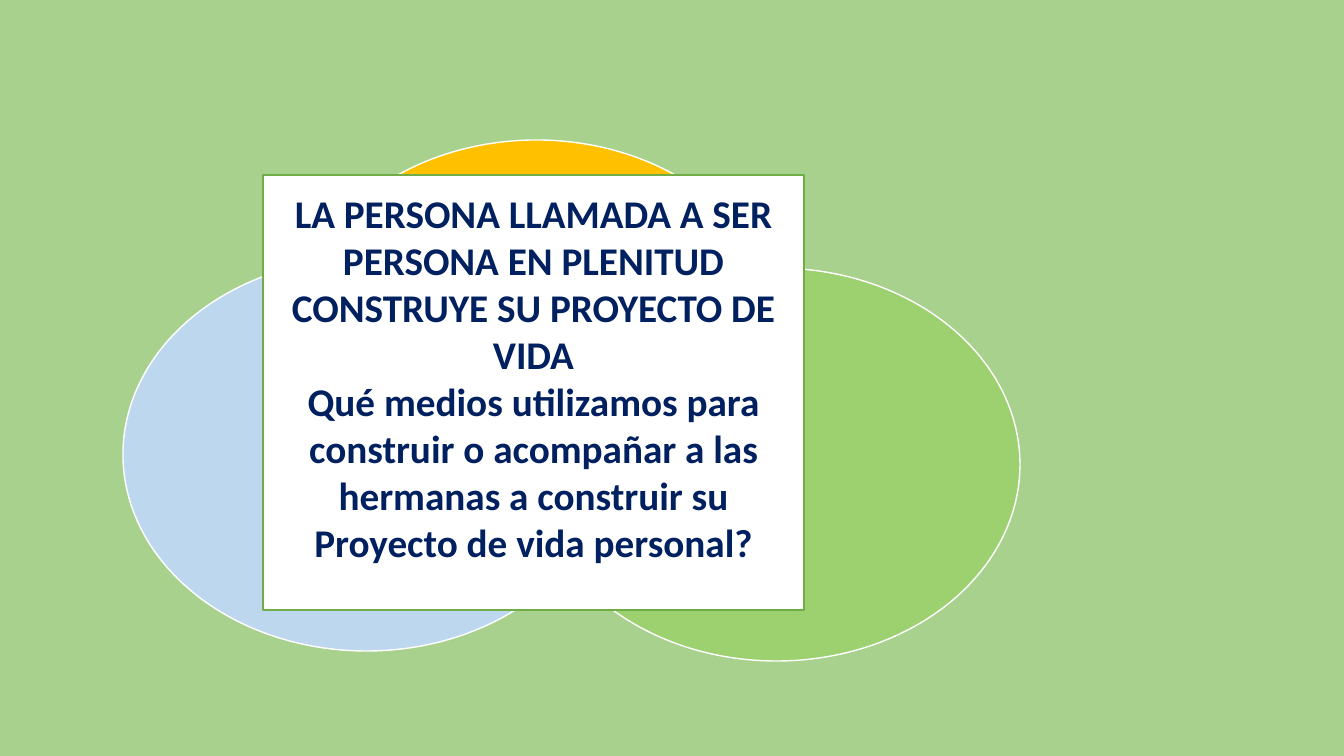
from lxml import etree
from pptx import Presentation
from pptx.dml.color import RGBColor
from pptx.enum.shapes import MSO_SHAPE
from pptx.enum.text import MSO_ANCHOR, PP_ALIGN
from pptx.oxml.ns import qn
from pptx.util import Pt

PX = 914400 / 100.8
OVAL, RECT = MSO_SHAPE.OVAL, MSO_SHAPE.RECTANGLE
MIDDLE, CENTER = MSO_ANCHOR.MIDDLE, PP_ALIGN.CENTER
WIDTH, HEIGHT = 1344, 756
FONT = {"name": "Calibri", "size": Pt(28), "bold": True}
CIRCLE_W, CIRCLE_H = 487, 393
CIRCLES = [(410, 128, "92D050", 50), (170, 0, "FFC000", 100), (0, 118, "BDD7EE", 100)]
MESSAGE = [
    "LA PERSONA LLAMADA A SER PERSONA EN PLENITUD CONSTRUYE SU PROYECTO DE VIDA",
    "Qué medios utilizamos para construir o acompañar a las hermanas "
    "a construir su Proyecto de vida personal?",
]


def px(n):
    """Turn pixels into EMU."""
    return round(n * PX)


def paint(color_format, value):
    """Set a colour from a hex string."""
    color_format.rgb = RGBColor.from_string(value)


def add_shape(slide, kind, box, fill, line, opacity=100):
    """Add a flat shape with a thin outline."""
    sp = slide.shapes.add_shape(kind, *map(px, box))
    sp.shadow.inherit = False
    sp.fill.solid()
    paint(sp.fill.fore_color, fill)
    if opacity < 100:
        clr = sp.fill._xPr.find(qn("a:solidFill"))[0]
        etree.SubElement(clr, qn("a:alpha"), val=str(opacity * 1000))
    paint(sp.line.color, line)
    sp.line.width = Pt(1)
    return sp


def add_circles(slide, x, y):
    """Place the three overlapping ellipses from a top-left corner."""
    for dx, dy, fill, opacity in CIRCLES:
        box = (x + dx, y + dy, CIRCLE_W, CIRCLE_H)
        add_shape(slide, OVAL, box, fill, "FFFFFF", opacity)


def add_message(slide, box):
    """Place the white panel with the question."""
    tf = add_shape(slide, RECT, box, "FFFFFF", "70AD47").text_frame
    layout = {"word_wrap": True, "vertical_anchor": MIDDLE, "margin_bottom": px(35)}
    for name, value in layout.items():
        setattr(tf, name, value)
    for i, text in enumerate(MESSAGE):
        p = tf.add_paragraph() if i else tf.paragraphs[0]
        p.alignment = CENTER
        r = p.add_run()
        r.text = text
        for name, value in FONT.items():
            setattr(r.font, name, value)
        paint(r.font.color, "002060")


def main():
    """Build and save the slide."""
    prs = Presentation()
    prs.slide_width, prs.slide_height = px(WIDTH), px(HEIGHT)
    slide = prs.slides.add_slide(prs.slide_layouts[6])
    slide.background.fill.solid()
    paint(slide.background.fill.fore_color, "A9D18E")
    add_circles(slide, 123, 140)
    add_message(slide, (263, 175, 541, 435))
    prs.save("out.pptx")


if __name__ == "__main__":
    main()
